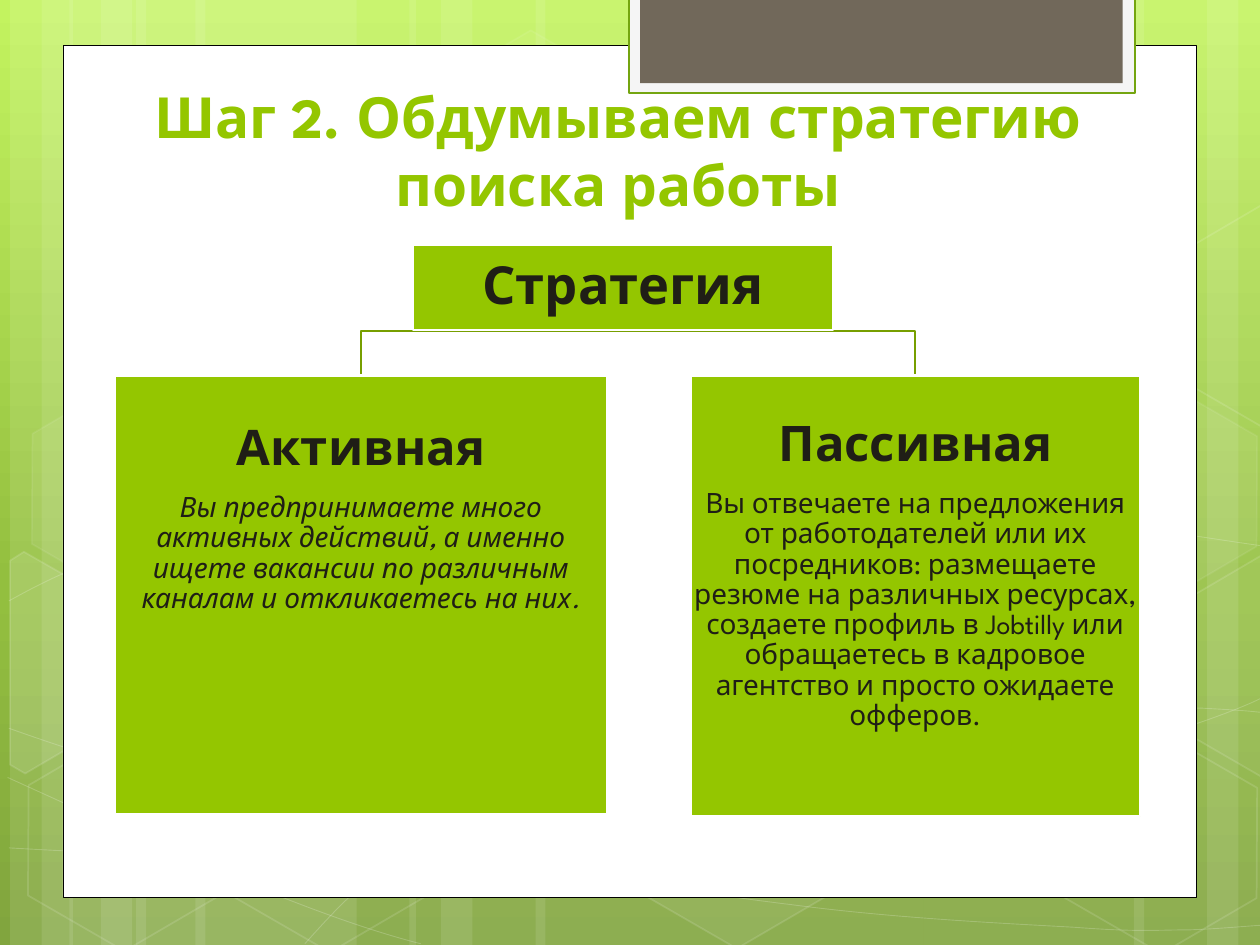
from typing import NamedTuple, Optional

from lxml import etree
from pptx import Presentation
from pptx.dml.color import RGBColor
from pptx.enum.shapes import MSO_SHAPE
from pptx.enum.text import MSO_ANCHOR, MSO_AUTO_SIZE, PP_ALIGN
from pptx.oxml.ns import qn
from pptx.util import Inches, Pt

RECTANGLE, HEXAGON = MSO_SHAPE.RECTANGLE, MSO_SHAPE.HEXAGON
TOP, MIDDLE, BOTTOM = MSO_ANCHOR.TOP, MSO_ANCHOR.MIDDLE, MSO_ANCHOR.BOTTOM
CENTER = PP_ALIGN.CENTER

WHITE = RGBColor(0xFF, 0xFF, 0xFF)
BLACK = RGBColor(0x00, 0x00, 0x00)
GREEN = RGBColor(0x94, 0xC6, 0x00)
LINK_GREEN = RGBColor(0x77, 0x9F, 0x00)
FRAME_GREEN = RGBColor(0x74, 0xA5, 0x10)
PALE = RGBColor(0xF5, 0xF5, 0xF5)
BROWN = RGBColor(0x71, 0x68, 0x5A)
INK = RGBColor(0x1F, 0x1E, 0x16)
FONT = "League Spartan"
BACKGROUND_STOPS = ((0, "C3F35F"), (62, "93BF3F"), (100, "81A53E"))

Point = tuple[float, float]


class Box(NamedTuple):
    left: float
    top: float
    width: float
    height: float


class Look(NamedTuple):
    """Fill and line, with opacity in percent and line width in points."""
    fill: Optional[RGBColor] = None
    fill_opacity: int = 100
    line: Optional[RGBColor] = None
    width: float = 1
    line_opacity: int = 100


class Hexagon(NamedTuple):
    left: float
    top: float
    fill_opacity: int
    line_opacity: int


class Card(NamedTuple):
    box: Box
    heading: str
    detail: str
    italic: bool
    text_top: float


STRIPES = ((1.08, 1.75), (0.08, 0.5), (0.33, 0.83), (1.55, 1.75), (0.55, 0.5), (0.8, 0.83),
           (7.33, 1.75), (9.58, 0.5), (9, 0.83), (4.25, 3.08), (3.25, 0.5), (3.5, 0.83))

# Each curve is a start point followed by three points per Bezier segment.
CURVES = (
    ((0.07, 6.73), (0.61, 6.76), (1.15, 6.79), (1.9, 6.78), (2.65, 6.77), (3.58, 6.75),
     (4.58, 6.65), (5.58, 6.55), (7, 6.36), (7.92, 6.17), (8.83, 5.98), (9.77, 5.68),
     (10.07, 5.51)),
    ((0.07, 4.77), (0.36, 4.61), (0.65, 4.46), (1.21, 4.31), (1.78, 4.16), (2.59, 3.94),
     (3.47, 3.87), (4.36, 3.8), (5.44, 3.79), (6.54, 3.87), (7.64, 3.95), (9.47, 4.26),
     (10.07, 4.34)),
    ((0.06, 6.17), (1.27, 6.72), (2.47, 7.27), (3.34, 7.49)),
    ((0.07, 5.78), (0.38, 5.89), (0.7, 6), (1.28, 6.16), (1.86, 6.31), (2.73, 6.56),
     (3.57, 6.73), (4.4, 6.9), (5.45, 7.08), (6.28, 7.18), (7.11, 7.29), (8, 7.33),
     (8.53, 7.36), (9.05, 7.4), (9.19, 7.38), (9.45, 7.38), (9.71, 7.37), (9.89, 7.35),
     (10.07, 7.34)),
    ((2.42, 7.49), (2.6, 7.29), (2.78, 7.09), (3.02, 6.91), (3.26, 6.73), (3.6, 6.53),
     (3.88, 6.39), (4.16, 6.25), (4.33, 6.19), (4.7, 6.09), (5.06, 5.99), (5.73, 5.85),
     (6.08, 5.78), (6.44, 5.71), (6.49, 5.71), (6.8, 5.69), (7.11, 5.66), (7.6, 5.63),
     (7.94, 5.62), (8.29, 5.61), (8.86, 5.62), (8.86, 5.62), (9.08, 5.62), (9.3, 5.62),
     (9.53, 5.62), (9.71, 5.63), (9.88, 5.64), (9.97, 5.65), (10.06, 5.66), (10.03, 5.65),
     (10.06, 5.66)),
)

HEXAGONS = (
    Hexagon(3.34, 0.36, 4, 8), Hexagon(4.97, 5.89, 6, 12), Hexagon(0.11, 5.91, 0, 12),
    Hexagon(0.14, 3.12, 7, 8), Hexagon(1.74, 5.92, 0, 12), Hexagon(7.53, 4.53, 10, 12),
    Hexagon(8.34, 5.93, 0, 12), Hexagon(8.34, 3.14, 7, 8),
)

# Hexagons cut by the slide edge, each with its fill opacity.
CUT_HEXAGONS = (
    (((0.08, 4.45), (0.19, 4.38), (0.96, 4.82), (0.95, 5.7), (0.2, 6.14), (0.08, 6.07)), 10),
    (((9.26, 4.85), (10.01, 4.41), (10.09, 4.46), (10.09, 6.13), (10.02, 6.17), (9.26, 5.73)), 4),
    (((9.26, 2.07), (10.01, 1.63), (10.1, 1.68), (10.09, 3.35), (10.02, 3.39), (9.26, 2.95)), 0),
)

PANELS = (
    (Box(0.5, 0.36, 9, 6.76), Look(WHITE, line=BLACK, width=0.5)),
    (Box(4.99, -0.02, 4.02, 0.76), Look(PALE, line=FRAME_GREEN, width=1.25)),
    (Box(5.08, -0.02, 3.83, 0.68), Look(BROWN)),
)

ROOT = Box(3.28, 1.94, 3.33, 0.68)
CARD_LOOK = Look(GREEN, line=WHITE, width=1.25)
CARDS = (
    Card(Box(0.91, 2.98, 3.91, 3.48), "Активная",
         "Вы предпринимаете много активных действий, а именно ищете вакансии "
         "по различным каналам и откликаетесь на них.", True, 0.38),
    Card(Box(5.48, 2.98, 3.57, 3.5), "Пассивная",
         "Вы отвечаете на предложения от работодателей или их посредников: размещаете "
         "резюме на различных ресурсах, создаете профиль в Jobtilly или обращаетесь "
         "в кадровое агентство и просто ожидаете офферов.", False, 0.35),
)


def set_opacity(parent, percent: int) -> None:
    if percent < 100:
        color = parent.find(".//" + qn("a:srgbClr"))
        etree.SubElement(color, qn("a:alpha"), val=str(percent * 1000))


def apply_look(shape, look: Look) -> None:
    shape.shadow.inherit = False
    properties = shape.element.spPr
    if look.fill is None or look.fill_opacity == 0:
        shape.fill.background()
    else:
        shape.fill.solid()
        shape.fill.fore_color.rgb = look.fill
        set_opacity(properties.find(qn("a:solidFill")), look.fill_opacity)
    if look.line is None:
        shape.line.fill.background()
    else:
        shape.line.color.rgb = look.line
        shape.line.width = Pt(look.width)
        set_opacity(properties.find(qn("a:ln")), look.line_opacity)


def add_box(slide, box: Box, look: Look, kind=RECTANGLE):
    shape = slide.shapes.add_shape(kind, *(Inches(length) for length in box))
    apply_look(shape, look)
    return shape


def add_outline(slide, points, look: Look, close: bool = False):
    corners = [(Inches(x), Inches(y)) for x, y in points]
    builder = slide.shapes.build_freeform(*corners[0])
    builder.add_line_segments(corners[1:], close=close)
    shape = builder.convert_to_shape()
    apply_look(shape, look)
    return shape


def add_curve(slide, controls: tuple[Point, ...], look: Look) -> None:
    """Draw the segment ends as an outline, then turn each segment into a Bezier."""
    shape = add_outline(slide, controls[::3], look)
    segments = list(shape.element.iter(qn("a:lnTo")))
    for index, segment in enumerate(segments):
        bezier = etree.Element(qn("a:cubicBezTo"))
        for x, y in controls[3 * index + 1:3 * index + 4]:
            etree.SubElement(bezier, qn("a:pt"), x=str(Inches(x) - shape.left),
                             y=str(Inches(y) - shape.top))
        segment.getparent().replace(segment, bezier)


def write_text(paragraph, text: str, *, size: float, color: RGBColor = INK, bold: bool = False,
               italic: bool = False, spacing: float = 0.9, after: float = 0) -> None:
    paragraph.alignment = CENTER
    paragraph.line_spacing = spacing
    paragraph.space_after = Pt(after)
    run = paragraph.add_run()
    run.text = text
    font = run.font
    font.name, font.size, font.bold, font.italic = FONT, Pt(size), bold, italic
    font.color.rgb = color


def prepare_frame(shape, anchor, top: float = 0.02):
    frame = shape.text_frame
    frame.word_wrap = True
    frame.vertical_anchor = anchor
    frame.margin_left = frame.margin_right = frame.margin_bottom = Inches(0.02)
    frame.margin_top = Inches(top)
    return frame


def draw_background(slide) -> None:
    fill = slide.background.fill
    fill.gradient()
    fill.gradient_angle = 270
    stops = slide.element.find(".//" + qn("a:gsLst"))
    for stop in list(stops):
        stops.remove(stop)
    for position, color in BACKGROUND_STOPS:
        stop = etree.SubElement(stops, qn("a:gs"), pos=str(position * 1000))
        etree.SubElement(stop, qn("a:srgbClr"), val=color)
    for left, width in STRIPES:
        add_box(slide, Box(left, 0, width, 7.5), Look(WHITE, 10))
    for controls in CURVES:
        add_curve(slide, controls, Look(line=WHITE, width=0.5, line_opacity=20))
    for item in HEXAGONS:
        look = Look(WHITE, item.fill_opacity, WHITE, 1, item.line_opacity)
        hexagon = add_box(slide, Box(item.left, item.top, 1.75, 1.52), look, HEXAGON)
        hexagon.adjustments[0] = 0.285
        hexagon.rotation = 30
    for points, opacity in CUT_HEXAGONS:
        add_outline(slide, points, Look(WHITE, opacity, WHITE, 1, 12), close=True)
    for box, look in PANELS:
        add_box(slide, box, look)


def draw_title(slide) -> None:
    title = slide.shapes.title
    title.left, title.top, title.width, title.height = map(Inches, (1.06, 0.68, 7.69, 1.1))
    frame = title.text_frame
    frame.auto_size = MSO_AUTO_SIZE.NONE
    frame.vertical_anchor = BOTTOM
    write_text(frame.paragraphs[0], "Шаг 2. Обдумываем стратегию поиска работы",
               size=32.4, color=GREEN, bold=True, spacing=1)
    slide.shapes.element.append(title.element)  # bring in front of the panels


def draw_strategy(slide) -> None:
    root_x, root_bottom = ROOT.left + ROOT.width / 2, ROOT.top + ROOT.height
    for card in reversed(CARDS):
        card_x = card.box.left + card.box.width / 2
        elbow = [(root_x, root_bottom), (root_x, 2.63), (card_x, 2.63), (card_x, card.box.top)]
        add_outline(slide, elbow, Look(line=LINK_GREEN, width=1.25))
    frame = prepare_frame(add_box(slide, ROOT, CARD_LOOK), MIDDLE)
    write_text(frame.paragraphs[0], "Стратегия", size=30, bold=True)
    for card in CARDS:
        frame = prepare_frame(add_box(slide, card.box, CARD_LOOK), TOP, card.text_top)
        write_text(frame.paragraphs[0], card.heading, size=28, bold=True, after=9.8)
        write_text(frame.add_paragraph(), card.detail, size=16, italic=card.italic)


def main() -> None:
    presentation = Presentation()
    presentation.slide_width, presentation.slide_height = Inches(10), Inches(7.5)
    slide = presentation.slides.add_slide(presentation.slide_layouts[5])
    draw_background(slide)
    draw_title(slide)
    draw_strategy(slide)
    presentation.save("out.pptx")


if __name__ == "__main__":
    main()
